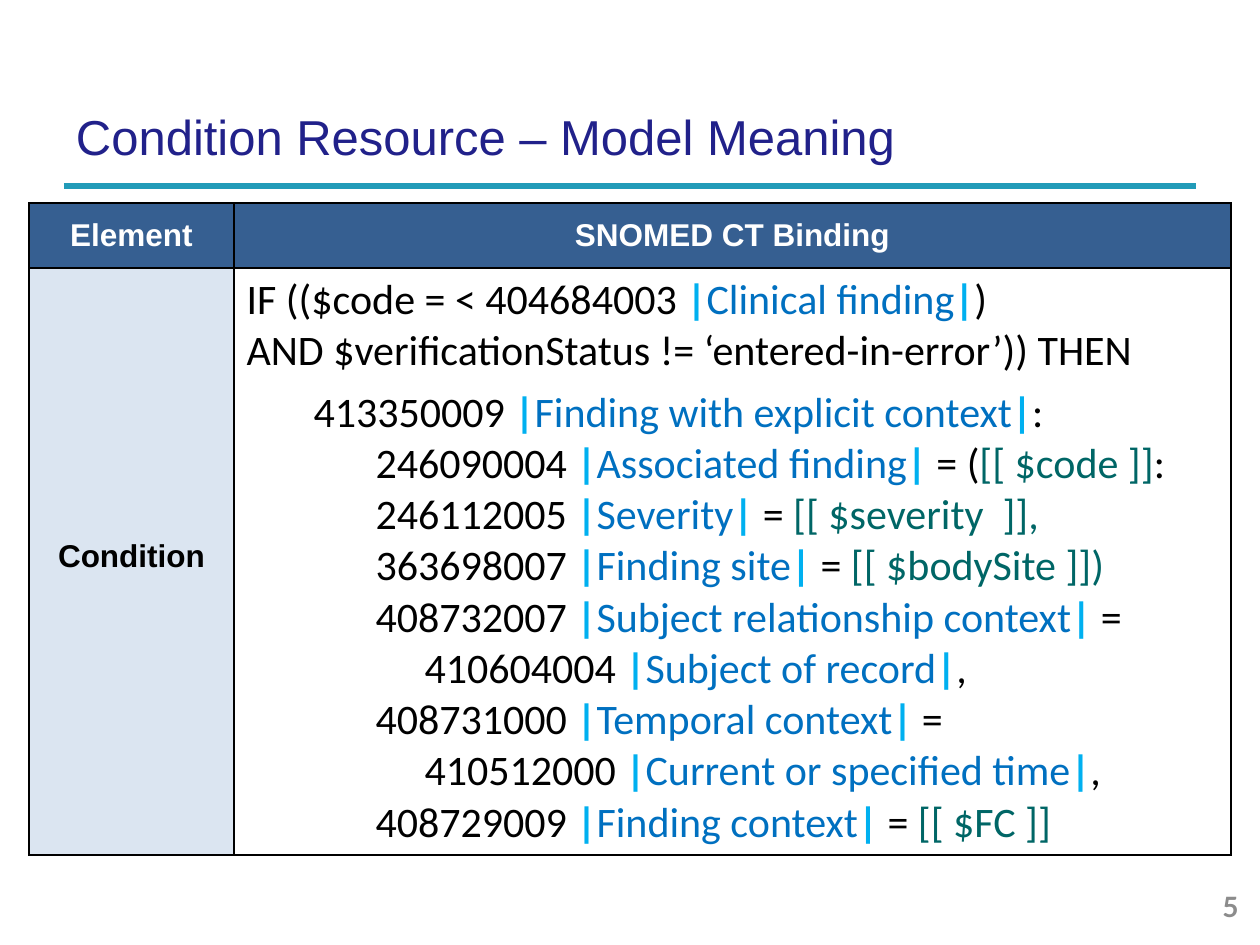
"""Build the slide on the model meaning of the Condition resource."""
from lxml.etree import SubElement
from pptx import Presentation
from pptx.dml.color import RGBColor
from pptx.enum.shapes import MSO_CONNECTOR
from pptx.enum.text import MSO_ANCHOR, MSO_AUTO_SIZE, PP_ALIGN
from pptx.oxml.ns import qn
from pptx.util import Pt

PX = 914400 // 126
BLACK, PIPE, TERM, VARIABLE = "000000", "00B0F0", "0070C0", "006666"


def colour(value):
    return RGBColor.from_string(value)


def style(span, font, size, value, bold=False):
    span.font.name = font
    span.font.size = Pt(size)
    span.font.bold = bold
    span.font.color.rgb = colour(value)


deck = Presentation()
deck.slide_width, deck.slide_height = 1260 * PX, 945 * PX
page = deck.slides.add_slide(deck.slide_layouts[5])

rule = page.shapes.add_connector(MSO_CONNECTOR.STRAIGHT, 64 * PX, 186 * PX, 1196 * PX, 186 * PX)
rule.line.color.rgb = colour("229BB8")
rule.line.width = Pt(3)
SubElement(rule._element.spPr, qn("a:effectLst"))

title = page.shapes.title
title.left, title.top, title.width, title.height = 63 * PX, 102 * PX, 1134 * PX, 76 * PX
frame = title.text_frame
frame.text = "Condition Resource – Model Meaning"
frame.auto_size = MSO_AUTO_SIZE.NONE
frame.vertical_anchor = MSO_ANCHOR.BOTTOM
frame.margin_left = frame.margin_right = frame.margin_top = frame.margin_bottom = 13 * PX
frame.paragraphs[0].alignment = PP_ALIGN.LEFT
style(frame.paragraphs[0].runs[0], "Arial", 28, "21218A")

number = page.shapes.add_textbox(1179 * PX, 886 * PX, 72 * PX, 40 * PX).text_frame
number.text = "5"
number.word_wrap = True
number.vertical_anchor = MSO_ANCHOR.MIDDLE
number.paragraphs[0].alignment = PP_ALIGN.RIGHT
style(number.paragraphs[0].runs[0], "Lato", 16, "8C8C8C", True)

table = page.shapes.add_table(2, 2, 29 * PX, 203 * PX, 1202 * PX, 652 * PX).table
table.columns[0].width, table.columns[1].width = 205 * PX, 997 * PX
table.rows[0].height, table.rows[1].height = 65 * PX, 587 * PX

fills = ["365F91", "365F91", "DBE5F1", "FFFFFF"]
for cell, fill in zip(table.iter_cells(), fills):
    for side in ("a:lnL", "a:lnR", "a:lnT", "a:lnB"):
        border = SubElement(cell._tc.get_or_add_tcPr(), qn(side), w=str(Pt(1)))
        SubElement(SubElement(border, qn("a:solidFill")), qn("a:srgbClr"), val=BLACK)
    cell.fill.solid()
    cell.fill.fore_color.rgb = colour(fill)
    cell.vertical_anchor = MSO_ANCHOR.MIDDLE

labels = [
    (0, 0, "Element", "FFFFFF"),
    (0, 1, "SNOMED CT Binding", "FFFFFF"),
    (1, 0, "Condition", BLACK),
]
for row, column, text, value in labels:
    cell = table.cell(row, column)
    cell.text = text
    para = cell.text_frame.paragraphs[0]
    para.alignment = PP_ALIGN.CENTER
    para.space_after = Pt(2)
    style(para.runs[0], "Arial", 18, value, True)
    if row:
        para.line_spacing = Pt(15)

binding = [
    (0, "IF (($code = < 404684003 ", "Clinical finding", ") ", "", ""),
    (0, "AND $verificationStatus != ‘entered-in-error’)) THEN", "", "", "", ""),
    (67, "413350009 ", "Finding with explicit context", ":", "", ""),
    (129, "246090004 ", "Associated finding", " = (", "[[ $code ]]", ":"),
    (129, "246112005 ", "Severity", " = ", "[[ $severity  ]],", ""),
    (129, "363698007 ", "Finding site", " = ", "[[ $bodySite ]])", ""),
    (129, "408732007 ", "Subject relationship context", " = ", "", ""),
    (178, "410604004 ", "Subject of record", ",", "", ""),
    (129, "408731000 ", "Temporal context", " = ", "", ""),
    (178, "410512000 ", "Current or specified time", ",", "", ""),
    (129, "408729009 ", "Finding context", " = ", "[[ $FC ]]", ""),
]
frame = table.cell(1, 1).text_frame
for index, (indent, concept, term, operator, variable, ending) in enumerate(binding):
    para = frame.add_paragraph() if index else frame.paragraphs[0]
    para.alignment = PP_ALIGN.JUSTIFY
    para._p.get_or_add_pPr().set("marL", str(indent * PX))
    if index == 1:
        para.space_after = Pt(6)
    pipe = "|" if term else ""
    pieces = [
        (concept, BLACK), (pipe, PIPE), (term, TERM), (pipe, PIPE),
        (operator, BLACK), (variable, VARIABLE), (ending, BLACK),
    ]
    for text, value in pieces:
        if text:
            span = para.add_run()
            span.text = text
            style(span, "Calibri", 24, value, value == PIPE)

deck.save("out.pptx")
